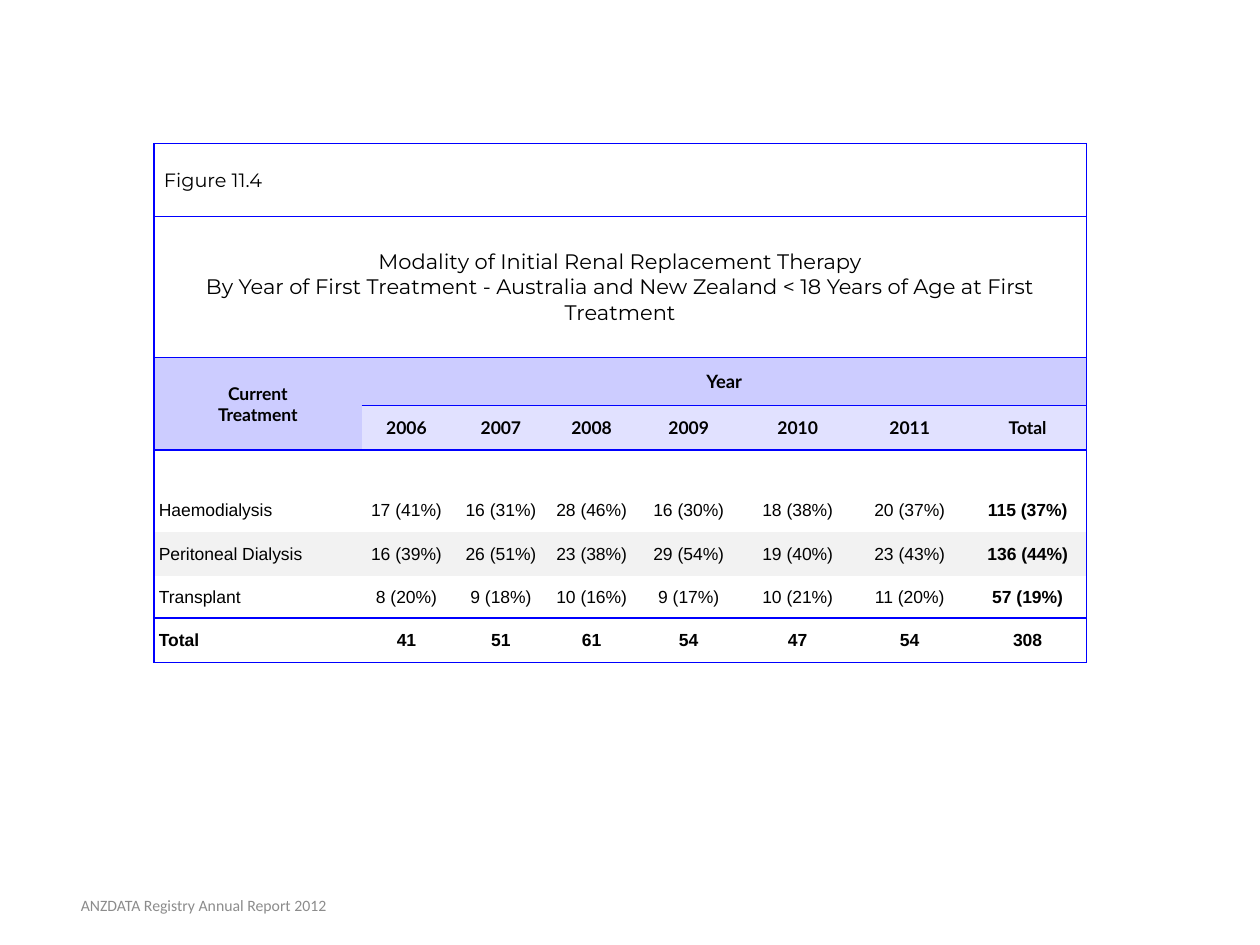
from lxml.etree import SubElement as add_element
from pptx import Presentation
from pptx.dml.color import RGBColor
from pptx.enum.text import MSO_ANCHOR as Anchor, PP_ALIGN as Align
from pptx.oxml.ns import qn
from pptx.util import Pt

BLUE = "0000FF"
COLUMN_WIDTHS = [118.8, 51.1, 56.9, 46.8, 64.1, 60.5, 67.5, 67.3]
ROW_HEIGHTS = [41.8, 80.6, 27.4, 25.4, 22.3, 24.6, 25.3, 23.8, 25.4]
RULED_ROWS = {-1, 0, 1, 2, 3, 7, 8}  # rows with a line below them
YEARS = ["2006", "2007", "2008", "2009", "2010", "2011", "Total"]
BODY_START = 5
BODY = [
    ["Haemodialysis", "17 (41%)", "16 (31%)", "28 (46%)", "16 (30%)",
     "18 (38%)", "20 (37%)", "115 (37%)"],
    ["Peritoneal Dialysis", "16 (39%)", "26 (51%)", "23 (38%)", "29 (54%)",
     "19 (40%)", "23 (43%)", "136 (44%)"],
    ["Transplant", "8 (20%)", "9 (18%)", "10 (16%)", "9 (17%)",
     "10 (21%)", "11 (20%)", "57 (19%)"],
    ["Total", "41", "51", "61", "54", "47", "54", "308"],
]


def color(value):
    return RGBColor.from_string(value)


def write(frame, lines, font, size, align=Align.CENTER, bold=False, ink="000000"):
    for index, line in enumerate(lines):
        para = frame.paragraphs[0] if index == 0 else frame.add_paragraph()
        para.alignment = align
        span = para.add_run()
        span.text = line
        formats = {"name": font, "size": Pt(size), "bold": bold}
        for name, value in formats.items():
            setattr(span.font, name, value)
        span.font.color.rgb = color(ink)


def add_border(cell, side, visible):
    line = add_element(cell._tc.get_or_add_tcPr(), qn(f"a:ln{side}"), w=str(Pt(1)))
    if visible:
        fill = add_element(line, qn("a:solidFill"))
        add_element(fill, qn("a:srgbClr"), val=BLUE)
    else:
        add_element(line, qn("a:noFill"))


def style_cell(cell, row, column):
    margin = Pt(5.76 if row == 0 else 2.88)
    formats = {"vertical_anchor": Anchor.MIDDLE}
    for side in ("left", "right", "top", "bottom"):
        formats[f"margin_{side}"] = margin
    for name, value in formats.items():
        setattr(cell, name, value)

    # Rules: the outer frame and the lines under the ruled rows
    add_border(cell, "L", column == 0)
    add_border(cell, "R", column + cell.span_width == len(COLUMN_WIDTHS))
    add_border(cell, "T", row - 1 in RULED_ROWS)
    add_border(cell, "B", row + cell.span_height - 1 in RULED_ROWS)

    shade = {2: "CCCCFF", 3: "E1E1FF", 6: "F2F2F2"}.get(row)
    if shade:
        cell.fill.solid()
        cell.fill.fore_color.rgb = color(shade)
    else:
        cell.fill.background()


def add_grid(page):
    grid = page.shapes.add_table(len(ROW_HEIGHTS), len(COLUMN_WIDTHS), Pt(87.9),
                                 Pt(82), Pt(sum(COLUMN_WIDTHS)),
                                 Pt(sum(ROW_HEIGHTS))).table
    grid.first_row = grid.horz_banding = False
    for column, width in zip(grid.columns, COLUMN_WIDTHS):
        column.width = Pt(width)
    for row, height in zip(grid.rows, ROW_HEIGHTS):
        row.height = Pt(height)
    for first, last in [((0, 0), (0, 7)), ((1, 0), (1, 7)),
                        ((2, 0), (3, 0)), ((2, 1), (2, 7))]:
        grid.cell(*first).merge(grid.cell(*last))
    for row in range(len(ROW_HEIGHTS)):
        for column in range(len(COLUMN_WIDTHS)):
            cell = grid.cell(row, column)
            if not cell.is_spanned:
                style_cell(cell, row, column)
    return grid


def fill_headings(grid):
    write(grid.cell(0, 0).text_frame, ["Figure 11.4"], "Montserrat", 11, Align.LEFT)
    write(grid.cell(1, 0).text_frame,
          ["Modality of Initial Renal Replacement Therapy",
           "By Year of First Treatment - Australia and New Zealand"
           " < 18 Years of Age at First Treatment"], "Montserrat", 12)
    write(grid.cell(2, 0).text_frame, ["Current", "Treatment"], "Lato", 10, bold=True)
    write(grid.cell(2, 1).text_frame, ["Year"], "Lato", 10.5, bold=True)
    for column, year in enumerate(YEARS, 1):
        write(grid.cell(3, column).text_frame, [year], "Lato", 10, bold=True)


def fill_body(grid):
    # Small type keeps the spacer row low
    for column in range(len(COLUMN_WIDTHS)):
        para = grid.cell(BODY_START - 1, column).text_frame.paragraphs[0]
        add_element(para._p, qn("a:endParaRPr"), sz="1000")
    for row, values in enumerate(BODY, BODY_START):
        for column, value in enumerate(values):
            bold = values[0] == "Total" or column == len(values) - 1
            align = Align.CENTER if column else Align.LEFT
            write(grid.cell(row, column).text_frame, [value], "Arial", 10, align, bold)


def add_footer(page):
    box = page.shapes.add_textbox(Pt(2.2), Pt(502.6), Pt(228.2), Pt(28.8))
    box.text_frame.word_wrap = True
    box.text_frame.vertical_anchor = Anchor.MIDDLE
    write(box.text_frame, ["ANZDATA Registry Annual Report 2012"], "Calibri", 9,
          ink="8C8C8C")


def main():
    deck = Presentation()
    deck.slide_width, deck.slide_height = Pt(720), Pt(540)
    page = deck.slides.add_slide(deck.slide_layouts[6])
    grid = add_grid(page)
    fill_headings(grid)
    fill_body(grid)
    add_footer(page)
    deck.save("out.pptx")


if __name__ == "__main__":
    main()
